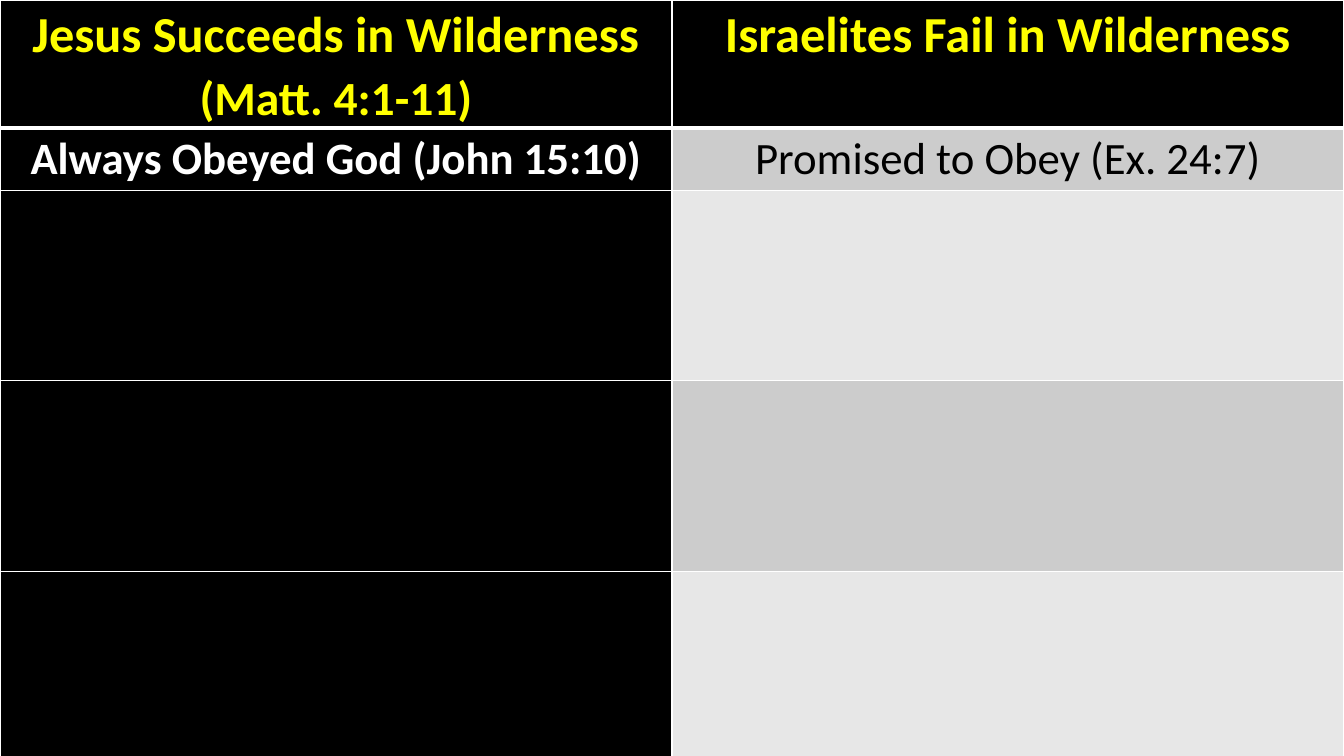
from pptx import Presentation as Deck
from pptx.dml.color import RGBColor as Rgb
from pptx.enum.text import PP_ALIGN as Align
from pptx.oxml.ns import qn
from pptx.util import Pt
from lxml.etree import SubElement as Sub

WIDE, HIGH = 960, 540
BLACK, WHITE, YELLOW = "000000", "FFFFFF", "FFFF00"
DARK, LIGHT = "CCCCCC", "E7E7E7"


def paint(code):
    return Rgb.from_string(code)


class Page:
    """Holds the style and the current slide."""
    font = "Calibri"
    pad = {"margin_left": Pt(5), "margin_right": Pt(5),
           "margin_top": 0, "margin_bottom": 0}

    def __init__(self, deck, back):
        self.slide = deck.slides.add_slide(deck.slide_layouts[6])
        fill = self.slide.background.fill
        fill.solid()
        fill.fore_color.rgb = paint(back)

    def table(self, wide, high, rows, cols):
        frame = self.slide.shapes.add_table(len(rows), cols, 0, 0, Pt(wide), Pt(high))
        grid = frame.table
        grid.first_row = grid.horz_banding = False
        for col in grid.columns:
            col.width = Pt(wide / cols)
        for row, size in zip(grid.rows, rows):
            row.height = Pt(size)
        frame.height = Pt(high)
        return grid

    def edge(self, cell, sides):
        props = cell._tc.get_or_add_tcPr()
        for side, size in sides.items():
            line = Sub(props, qn(f"a:ln{side}"), w=str(Pt(size)))
            fill = Sub(line, qn("a:solidFill"))
            Sub(fill, qn("a:srgbClr"), val=WHITE)

    def cell(self, cell, back, sides):
        self.edge(cell, sides)
        cell.fill.solid()
        cell.fill.fore_color.rgb = paint(back)

    def text(self, cell, runs, color, bold):
        for name, value in self.pad.items():
            setattr(cell, name, value)
        para = cell.text_frame.paragraphs[0]
        for name, value in {"alignment": Align.CENTER, "line_spacing": 1.07}.items():
            setattr(para, name, value)
        for words, size in runs:
            run = para.add_run()
            run.text = words
            look = {"name": self.font, "size": Pt(size), "bold": bold}
            for name, value in look.items():
                setattr(run.font, name, value)
            run.font.color.rgb = paint(color)


def main():
    deck = Deck()
    deck.slide_width, deck.slide_height = Pt(WIDE), Pt(HIGH)
    page = Page(deck, BLACK)

    # Grid: header, first contrast, three rows left open
    rows = [66, 44.6] + [136] * 3
    grid = page.table(WIDE, 541.4, rows, 2)

    # Fills and borders, with a thick rule under the header
    for r in range(len(rows)):
        right = BLACK if r == 0 else DARK if r % 2 else LIGHT
        sides = {"L": 1, "R": 1, "T": 3 if r == 1 else 1, "B": 3 if r == 0 else 1}
        for c, back in enumerate((BLACK, right)):
            page.cell(grid.cell(r, c), back, sides)

    # Wording: row, column, runs, colour, bold
    texts = [
        (0, 0, [("Jesus Succeeds in Wilderness ", 36), ("(Matt. 4:1-11)", 34)], YELLOW, True),
        (0, 1, [("Israelites Fail in Wilderness", 36)], YELLOW, True),
        (1, 0, [("Always Obeyed God (John 15:10)", 32)], WHITE, True),
        (1, 1, [("Promised to Obey (Ex. 24:7)", 32)], BLACK, False),
    ]
    for r, c, *rest in texts:
        page.text(grid.cell(r, c), *rest)

    deck.save("out.pptx")


if __name__ == "__main__":
    main()
